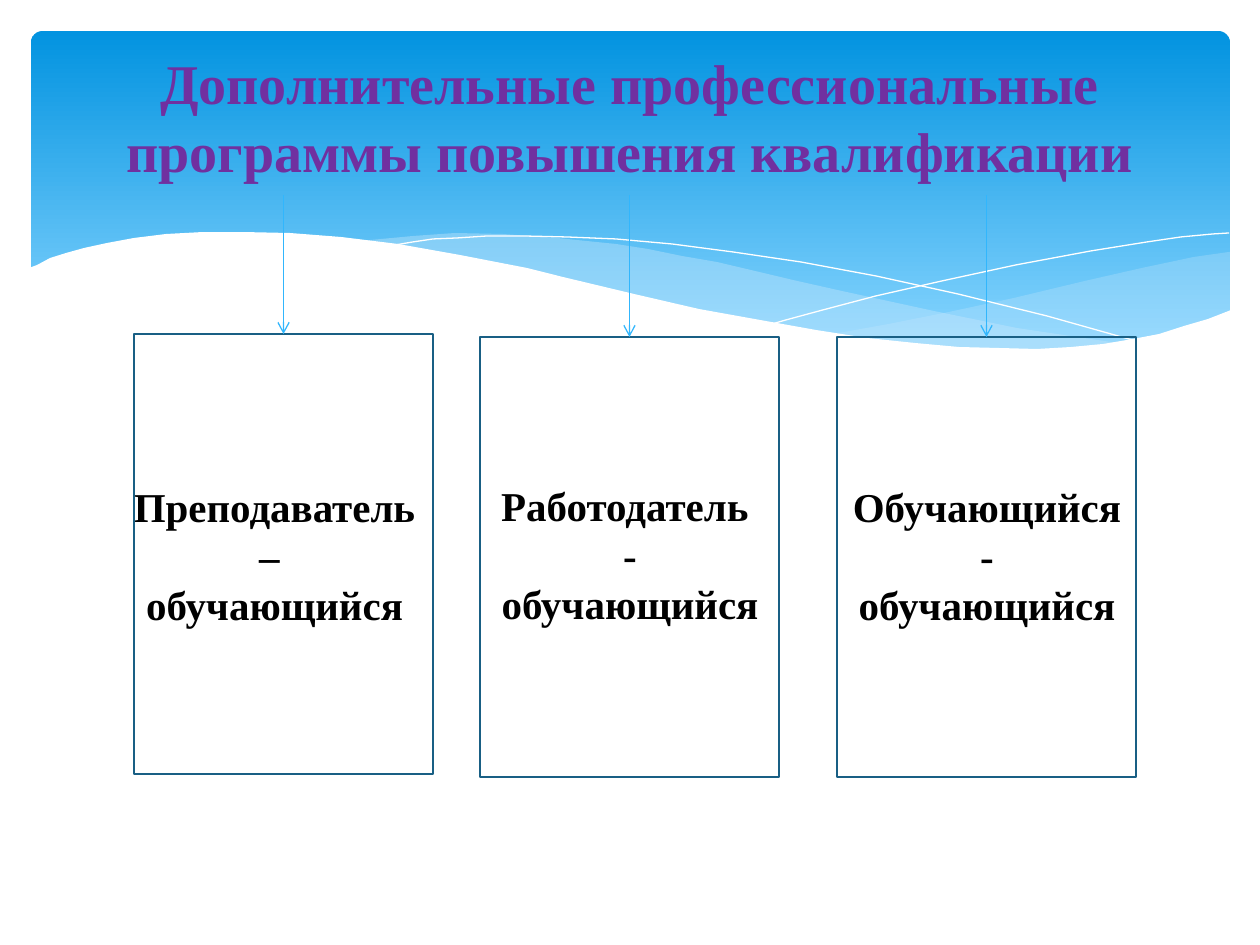
from lxml.etree import SubElement
from pptx import Presentation
from pptx.dml.color import RGBColor
from pptx.enum.shapes import MSO_CONNECTOR, MSO_SHAPE
from pptx.enum.text import MSO_ANCHOR, PP_ALIGN
from pptx.oxml.ns import qn
from pptx.util import Emu, Pt

PX = 914400 / 126
FONT = "Times New Roman"
WHITE = RGBColor(0xFF, 0xFF, 0xFF)
BLACK = RGBColor(0, 0, 0)
PURPLE = RGBColor(0x70, 0x30, 0xA0)
SKY_TOP = RGBColor(0x02, 0x93, 0xE0)
SKY_BOTTOM = RGBColor(0x83, 0xD3, 0xFE)
PALE_BLUE = RGBColor(0xC6, 0xE7, 0xFC)
ARROW_BLUE = RGBColor(0x31, 0xB6, 0xFD)
BORDER_BLUE = RGBColor(0x19, 0x5F, 0x84)

TITLE = "Дополнительные профессиональные программы повышения квалификации"

BOX_WIDTH, BOX_HEIGHT = 299, 440
ARROW_TOP = 195
TEXT_HEIGHT = 394
# box left, box top, text left, text top, text width, paragraphs
CARDS = [
    (134, 334, 115, 358, 319, ["Преподаватель – ", "обучающийся"]),
    (480, 337, 480, 357, 300, ["Работодатель ", "- обучающийся"]),
    (837, 337, 837, 358, 300, ["Обучающийся - обучающийся"]),
]

RIGHT_WAVE = [
    (1229, 252), (1194, 257), (1142, 268), (1085, 281), (1014, 298), (949, 312),
    (889, 324), (833, 334), (889, 342), (938, 347), (984, 349), (1026, 350),
    (1064, 349), (1098, 347), (1130, 343), (1160, 338), (1187, 331), (1213, 318),
    (1230, 311), (1230, 252),
]
MIDDLE_WAVE = [
    (1125, 344), (1091, 339), (1017, 328), (934, 311), (842, 291), (793, 280),
    (772, 275), (717, 262), (682, 256), (648, 249), (616, 244), (557, 238),
    (503, 234), (455, 233), (413, 236), (360, 241), (407, 247), (456, 256),
    (509, 266), (566, 280), (619, 292), (668, 302), (736, 318), (799, 329),
    (857, 338), (910, 345), (959, 349), (1017, 350), (1068, 349), (1114, 345),
]
FALLING_LINE = [
    (389, 246), (401, 244), (413, 242), (433, 239), (457, 238), (487, 236),
    (524, 236), (567, 237), (616, 239), (672, 244), (733, 252), (801, 262),
    (876, 276), (958, 294), (1047, 316), (1143, 343),
]
RISING_LINE = [
    (772, 324), (786, 320), (823, 310), (876, 296), (942, 281), (1016, 265),
    (1091, 251), (1147, 242), (1181, 237), (1213, 234), (1229, 233),
]
WHITE_WAVE = [
    (1231, 310), (1208, 319), (1184, 326), (1159, 334), (1133, 339), (1103, 344),
    (1071, 347), (1037, 349), (999, 348), (959, 347), (915, 343), (867, 338),
    (816, 330), (760, 320), (699, 309), (634, 294), (563, 277), (527, 268),
    (460, 255), (398, 244), (341, 237), (290, 233), (243, 232), (203, 232),
    (166, 234), (134, 238), (107, 243), (84, 248), (66, 253), (50, 258),
    (37, 265), (29, 268), (29, 415), (1231, 415),
]
# points, fill colour, opacity in percent
WAVES = [(RIGHT_WAVE, PALE_BLUE, 29), (MIDDLE_WAVE, PALE_BLUE, 40)]


def px(*lengths):
    return [Emu(round(length * PX)) for length in lengths]


def add_outline(slide, points, closed):
    builder = slide.shapes.build_freeform(*points[0], scale=PX)
    builder.add_line_segments(points[1:], close=closed)
    shape = builder.convert_to_shape()
    shape.shadow.inherit = False
    return shape


def add_wave(slide, points, color, opacity=100):
    shape = add_outline(slide, points, True)
    shape.line.fill.background()
    shape.fill.solid()
    shape.fill.fore_color.rgb = color
    if opacity < 100:
        rgb = shape._element.spPr.find(qn("a:solidFill"))[0]
        SubElement(rgb, qn("a:alpha"), val=str(opacity * 1000))


def add_hairline(slide, points):
    shape = add_outline(slide, points, False)
    shape.fill.background()
    shape.line.color.rgb = WHITE
    shape.line.width = Pt(0)


def add_sky(slide):
    sky = slide.shapes.add_shape(MSO_SHAPE.ROUNDED_RECTANGLE, *px(31, 31, 1199, 340))
    sky.adjustments[0] = 0.034
    sky.shadow.inherit = False
    sky.line.fill.background()
    sky.fill.gradient()
    sky.fill.gradient_angle = 270
    stops = sky.fill.gradient_stops
    for stop, position, color in zip(stops, (0, 0.9), (SKY_TOP, SKY_BOTTOM)):
        stop.position = position
        stop.color.rgb = color


def add_text(slide, bounds, paragraphs, size, color):
    text_frame = slide.shapes.add_textbox(*px(*bounds)).text_frame
    text_frame.word_wrap = True
    text_frame.vertical_anchor = MSO_ANCHOR.MIDDLE
    text_frame.text = "\n".join(paragraphs)
    for paragraph in text_frame.paragraphs:
        paragraph.alignment = PP_ALIGN.CENTER
        font = paragraph.runs[0].font
        font.name, font.size, font.bold = FONT, Pt(size), True
        font.color.rgb = color


def add_box(slide, left, top):
    box = slide.shapes.add_shape(
        MSO_SHAPE.RECTANGLE, *px(left, top, BOX_WIDTH, BOX_HEIGHT))
    box.shadow.inherit = False
    box.fill.background()
    box.line.color.rgb = BORDER_BLUE
    box.line.width = Pt(1.25)
    return box


def add_arrow_to(slide, box):
    center = box.left + box.width // 2
    arrow = slide.shapes.add_connector(
        MSO_CONNECTOR.STRAIGHT, center, px(ARROW_TOP)[0], center, box.top)
    arrow.end_connect(box, 0)
    arrow.line.color.rgb = ARROW_BLUE
    arrow.line.width = Pt(0.75)
    SubElement(arrow.line._get_or_add_ln(), qn("a:tailEnd"), type="arrow")
    SubElement(arrow._element.spPr, qn("a:effectLst"))


def main():
    presentation = Presentation()
    presentation.slide_width, presentation.slide_height = px(1260, 945)
    slide = presentation.slides.add_slide(presentation.slide_layouts[6])

    add_sky(slide)
    for points, color, opacity in WAVES:
        add_wave(slide, points, color, opacity)
    for points in (FALLING_LINE, RISING_LINE):
        add_hairline(slide, points)
    add_wave(slide, WHITE_WAVE, WHITE)

    add_text(slide, (63, 38, 1134, 156), [TITLE], 32, PURPLE)
    for left, top, text_left, text_top, text_width, paragraphs in CARDS:
        bounds = (text_left, text_top, text_width, TEXT_HEIGHT)
        add_text(slide, bounds, paragraphs, 23.4, BLACK)
        add_arrow_to(slide, add_box(slide, left, top))

    presentation.save("out.pptx")


if __name__ == "__main__":
    main()
